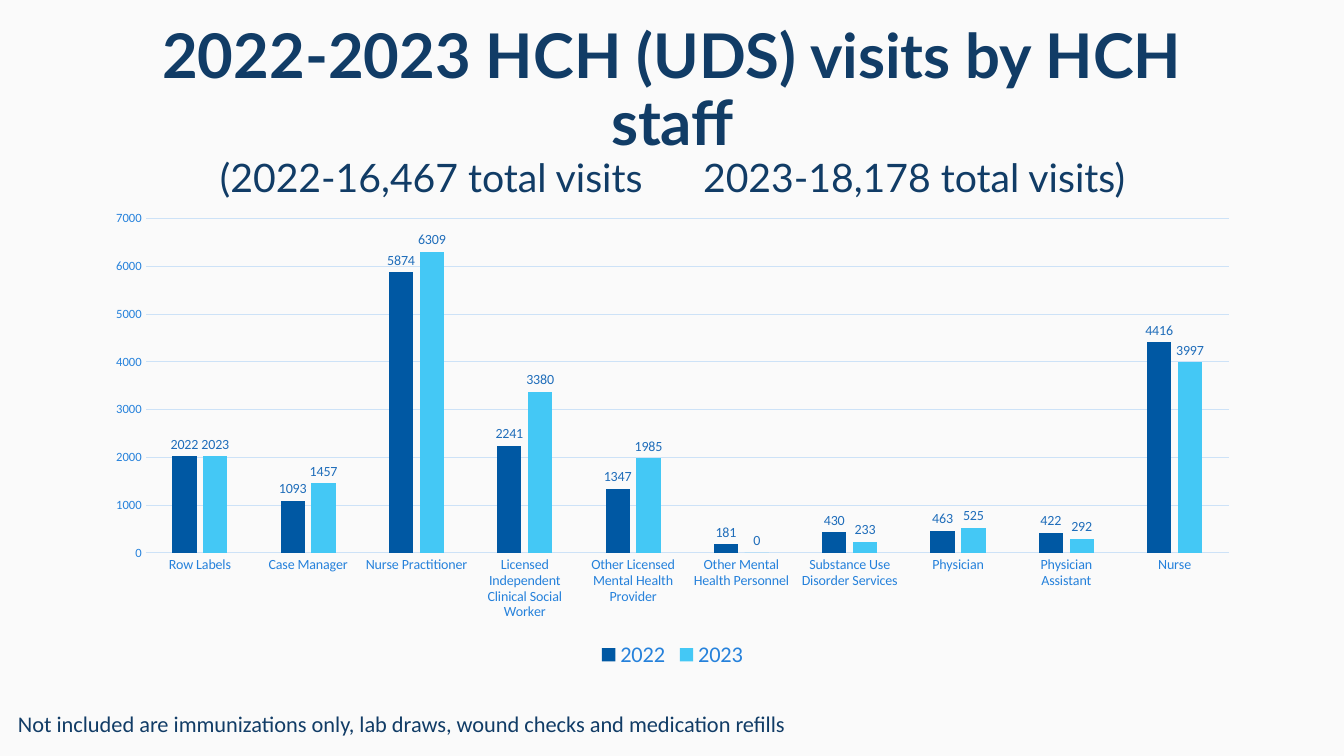
"""Build the slide of 2022-2023 HCH visits by staff type."""
from dataclasses import dataclass

from pptx import Presentation
from pptx.chart.data import CategoryChartData
from pptx.dml.color import RGBColor
from pptx.enum.chart import XL_CHART_TYPE, XL_LABEL_POSITION, XL_LEGEND_POSITION, XL_TICK_MARK
from pptx.enum.text import MSO_ANCHOR, MSO_AUTO_SIZE, PP_ALIGN
from pptx.util import Emu, Pt

COLUMNS = XL_CHART_TYPE.COLUMN_CLUSTERED
OUTSIDE = XL_LABEL_POSITION.OUTSIDE_END
BOTTOM = XL_LEGEND_POSITION.BOTTOM
NO_TICK = XL_TICK_MARK.NONE
MIDDLE = MSO_ANCHOR.MIDDLE
NO_FIT = MSO_AUTO_SIZE.NONE
CENTER = PP_ALIGN.CENTER

TITLE = "2022-2023 HCH (UDS) visits by HCH staff"
TOTALS = ("(2022-16,467 total visits", "2023-18,178 total visits)")
NOTE = "Not included are immunizations only, lab draws, wound checks and medication refills"
VISITS = [
    ("Row Labels", 2022, 2023),
    ("Case Manager", 1093, 1457),
    ("Nurse Practitioner", 5874, 6309),
    ("Licensed Independent Clinical Social Worker", 2241, 3380),
    ("Other Licensed Mental Health Provider", 1347, 1985),
    ("Other Mental Health Personnel", 181, 0),
    ("Substance Use Disorder Services", 430, 233),
    ("Physician", 463, 525),
    ("Physician Assistant", 422, 292),
    ("Nurse", 4416, 3997),
]
TITLE_BOX = (93, 40, 1159, 146)
CHART_BOX = (93, 202, 1159, 471)
NOTE_BOX = (8, 705, 931, 37)
SLIDE = (1344, 756)
TOTALS_GAP = 36


@dataclass(frozen=True)
class Theme:
    """Colours, fonts and type sizes."""
    back: str = "FAFAFA"
    ink: str = "113C66"
    axis: str = "2581DB"
    grid: str = "CDE2F7"
    label: str = "1F6DBA"
    bars: tuple = (("2022", "0058A3"), ("2023", "44C8F5"))
    head_font: str = "Lato"
    body_font: str = "Calibri"
    title: int = 44
    totals: int = 28
    body: int = 16
    small: int = 10
    scale: int = 9
    rule: float = 0.75


THEME = Theme()


def px(n):
    return Emu(round(n * 914400 / 100.8))


def box(values):
    return [px(v) for v in values]


def style(font, size, color, name=THEME.body_font, bold=False):
    font.size, font.name, font.bold = Pt(size), name, bold
    font.color.rgb = RGBColor.from_string(color)


def rule(line):
    line.color.rgb = RGBColor.from_string(THEME.grid)
    line.width = Pt(THEME.rule)


def add_run(p, text, *look):
    r = p.add_run()
    r.text = text
    style(r.font, *look)
    return r


def add_title(s):
    sp = s.shapes.title
    sp.left, sp.top, sp.width, sp.height = box(TITLE_BOX)
    tf = sp.text_frame
    tf.word_wrap, tf.auto_size, tf.vertical_anchor = True, NO_FIT, MIDDLE
    p = tf.paragraphs[0]
    p.alignment, p.line_spacing = CENTER, 0.9
    add_run(p, TITLE, THEME.title, THEME.ink, THEME.head_font, True)
    p.add_line_break()
    look = (THEME.totals, THEME.ink, THEME.head_font)
    add_run(p, TOTALS[0], *look)
    gap = add_run(p, " ", *look)
    gap.font._element.set("spc", str(TOTALS_GAP * 100))
    add_run(p, TOTALS[1], *look)


def add_visits_chart(s):
    data = CategoryChartData()
    data.categories = [row[0] for row in VISITS]
    for i, (year, _) in enumerate(THEME.bars, 1):
        data.add_series(year, [row[i] for row in VISITS])
    chart = s.shapes.add_chart(COLUMNS, *box(CHART_BOX), data).chart
    style(chart.font, THEME.small, THEME.ink)
    chart.has_title = False
    chart.has_legend = True
    chart.legend.position = BOTTOM
    chart.legend.include_in_layout = False
    style(chart.legend.font, THEME.body, THEME.axis)

    plot = chart.plots[0]
    plot.gap_width, plot.overlap, plot.vary_by_categories = 219, -27, False
    for series, (_, color) in zip(plot.series, THEME.bars):
        series.format.fill.solid()
        series.format.fill.fore_color.rgb = RGBColor.from_string(color)
        series.invert_if_negative = False
        labels = series.data_labels
        labels.show_value, labels.position = True, OUTSIDE
        style(labels.font, THEME.small, THEME.label)

    cats, vals = chart.category_axis, chart.value_axis
    for axis, size in ((cats, THEME.small), (vals, THEME.scale)):
        axis.major_tick_mark = axis.minor_tick_mark = NO_TICK
        style(axis.tick_labels.font, size, THEME.axis)
    rule(cats.format.line)
    vals.format.line.fill.background()
    vals.minimum_scale, vals.maximum_scale, vals.major_unit = 0, 7000, 1000
    rule(vals.major_gridlines.format.line)


def add_note(s):
    tf = s.shapes.add_textbox(*box(NOTE_BOX)).text_frame
    tf.word_wrap = True
    add_run(tf.paragraphs[0], NOTE, THEME.body, THEME.ink)


def main():
    prs = Presentation()
    prs.slide_width, prs.slide_height = box(SLIDE)
    s = prs.slides.add_slide(prs.slide_layouts[5])
    s.background.fill.solid()
    s.background.fill.fore_color.rgb = RGBColor.from_string(THEME.back)
    add_title(s)
    add_visits_chart(s)
    add_note(s)
    prs.save("out.pptx")


if __name__ == "__main__":
    main()
